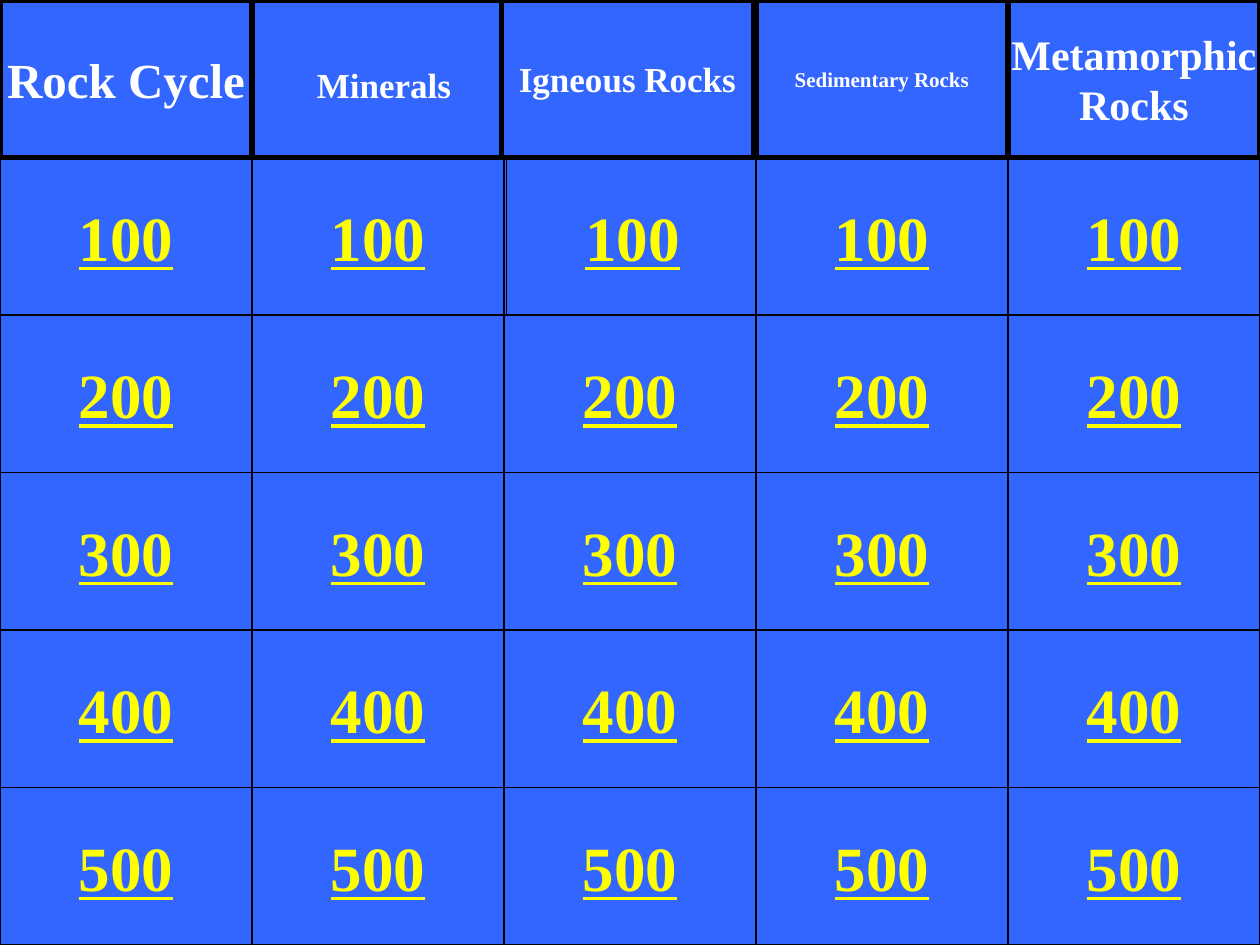
from pptx import Presentation
from pptx.dml.color import RGBColor
from pptx.enum.shapes import MSO_SHAPE
from pptx.enum.text import MSO_ANCHOR, PP_ALIGN
from pptx.util import Cm, Pt

CATEGORIES = [
    [[("Rock Cycle", 28)]],
    [[(" ", 28), ("Minerals", 20)]],
    [[("Igneous Rocks", 20)]],
    [[("Sedimentary Rocks", 12)]],
    [[("Metamorphic", 24)], [("Rocks", 24)]],
]
POINTS = ["100", "200", "300", "400", "500"]
NUDGES = {(2, 0): -0.05, (2, 1): 0.05}

THEME = {
    "font": "Times New Roman",
    "board": RGBColor(0x33, 0x66, 0xFF),
    "line": RGBColor(0, 0, 0),
    "heading": RGBColor(0xFF, 0xFF, 0xFF),
    "points": RGBColor(0xFF, 0xFF, 0x00),
    "points_size": 36,
    "heading_line": 3,
    "points_line": 0.75,
}

SLIDE_W, SLIDE_H = 25.4, 19.05
CELL_W = SLIDE_W / len(CATEGORIES)
CELL_H = SLIDE_H / (len(POINTS) + 1)


def write(tf, paragraphs, color, underline=None):
    tf.word_wrap = False
    tf.vertical_anchor = MSO_ANCHOR.MIDDLE
    for i, runs in enumerate(paragraphs):
        p = tf.add_paragraph() if i else tf.paragraphs[0]
        p.alignment = PP_ALIGN.CENTER
        for text, size in runs:
            r = p.add_run()
            r.text = text
            r.font.name = THEME["font"]
            r.font.size = Pt(size)
            r.font.bold = True
            r.font.underline = underline
            r.font.color.rgb = color


def add_cell(s, kind, col, row, line_width):
    left = col * CELL_W + NUDGES.get((col, row), 0)
    sp = s.shapes.add_shape(kind, Cm(left), Cm(row * CELL_H), Cm(CELL_W), Cm(CELL_H))
    sp.shadow.inherit = False
    sp.fill.solid()
    sp.fill.fore_color.rgb = THEME["board"]
    sp.line.color.rgb = THEME["line"]
    sp.line.width = Pt(line_width)
    return sp.text_frame


def main():
    prs = Presentation()
    prs.slide_width, prs.slide_height = Cm(SLIDE_W), Cm(SLIDE_H)
    s = prs.slides.add_slide(prs.slide_layouts[6])
    s.background.fill.solid()
    s.background.fill.fore_color.rgb = THEME["board"]

    for col in range(len(CATEGORIES)):
        for row, points in enumerate(POINTS, start=1):
            tf = add_cell(s, MSO_SHAPE.ACTION_BUTTON_CUSTOM, col, row, THEME["points_line"])
            write(tf, [[(points, THEME["points_size"])]], THEME["points"], underline=True)

    for col, heading in enumerate(CATEGORIES):
        tf = add_cell(s, MSO_SHAPE.RECTANGLE, col, 0, THEME["heading_line"])
        write(tf, heading, THEME["heading"])

    prs.save("out.pptx")


if __name__ == "__main__":
    main()
